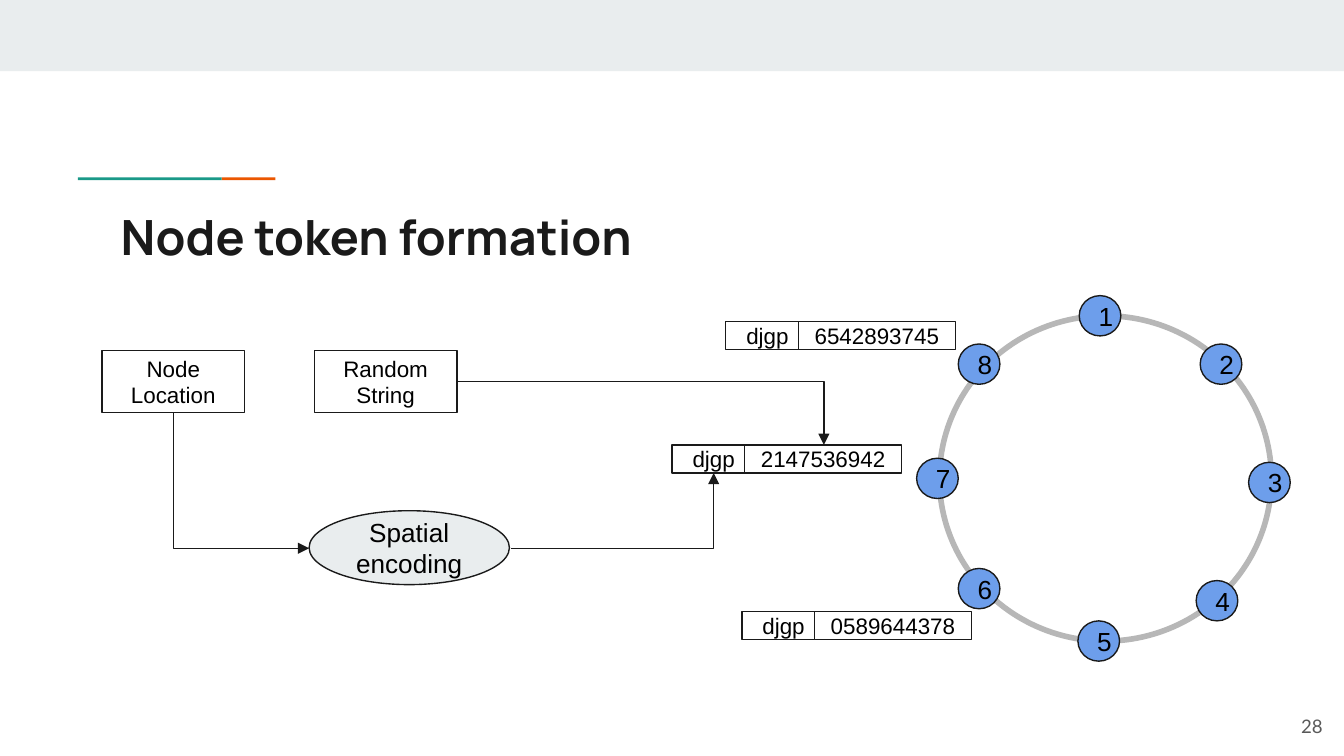
from dataclasses import dataclass
from typing import NamedTuple

from lxml.etree import SubElement
from pptx import Presentation
from pptx.dml.color import RGBColor
from pptx.enum.shapes import MSO_CONNECTOR as Connector, MSO_SHAPE as Preset
from pptx.enum.text import MSO_ANCHOR as Anchor, PP_ALIGN as Align
from pptx.oxml.ns import qn
from pptx.util import Inches, Pt


@dataclass(frozen=True)
class Theme:
    ink: str = "1A1A1A"
    text: str = "000000"
    muted: str = "595959"
    paper: str = "FFFFFF"
    band: str = "E9EDEE"
    teal: str = "1A9988"
    orange: str = "EB5600"
    node: str = "6D9EEB"
    ring: str = "B7B7B7"
    title_font: str = "Manrope"
    body_font: str = "Arial"
    number_font: str = "Lato"
    title_size: int = 26
    large: int = 14
    medium: int = 12
    small: int = 10
    thin: float = 0.75
    thick: float = 3


class Box(NamedTuple):
    left: float
    top: float
    width: float
    height: float


class RingNode(NamedTuple):
    label: str
    left: float
    top: float


class Token(NamedTuple):
    left: float
    top: float
    location_code: str
    random_part: str


class Arrow(NamedTuple):
    """An elbow that leaves its start horizontally and ends vertically."""
    start: tuple[float, float]
    end: tuple[float, float]
    arrowhead: str = "a:tailEnd"


THEME = Theme()
SLIDE_WIDTH = 10
SLIDE_HEIGHT = SLIDE_WIDTH * 9 / 16
NODE_WIDTH, NODE_HEIGHT = 0.31, 0.30
CODE_WIDTH, RANDOM_WIDTH, TOKEN_HEIGHT = 0.62, 1.17, 0.21
RANDOM_OFFSET = 0.54

RING = Box(6.99, 2.35, 2.47, 2.42)
NODES = [
    RingNode("1", 8.03, 2.20),
    RingNode("2", 8.93, 2.56),
    RingNode("3", 9.29, 3.44),
    RingNode("4", 8.90, 4.32),
    RingNode("5", 8.02, 4.62),
    RingNode("6", 7.13, 4.23),
    RingNode("7", 6.82, 3.41),
    RingNode("8", 7.13, 2.56),
]
TOKENS = [
    Token(5.40, 2.39, "djgp", "6542893745"),
    Token(5.52, 4.55, "djgp", "0589644378"),
    Token(5.00, 3.31, "djgp", "2147536942"),
]
ARROWS = [
    Arrow((2.30, 4.08), (1.29, 3.07), "a:headEnd"),
    Arrow((3.80, 4.08), (5.31, 3.52)),
    Arrow((3.41, 2.84), (6.13, 3.31)),
]


def rgb(value: str) -> RGBColor:
    return RGBColor.from_string(value)


def inches(box: Box) -> list[Inches]:
    return [Inches(length) for length in box]


def write(shape, words: str, size: int, font: str = THEME.body_font,
          color: str = THEME.text, align: Align = Align.CENTER,
          anchor: Anchor = Anchor.MIDDLE, bold: bool = False) -> None:
    frame = shape.text_frame
    frame.word_wrap = True
    frame.vertical_anchor = anchor
    frame.margin_left = frame.margin_right = Inches(0.1)
    frame.margin_top = frame.margin_bottom = Inches(0.1)
    paragraph = frame.paragraphs[0]
    paragraph.text = words
    paragraph.alignment = align
    paragraph.font.name = font
    paragraph.font.size = Pt(size)
    paragraph.font.bold = bold
    paragraph.font.color.rgb = rgb(color)


def add_figure(slide, preset: Preset, box: Box, fill: str | None,
               line: str | None = None, weight: float = THEME.thin):
    """Add a preset shape; None leaves the fill or the line out."""
    figure = slide.shapes.add_shape(preset, *inches(box))
    figure.shadow.inherit = False
    if fill:
        figure.fill.solid()
        figure.fill.fore_color.rgb = rgb(fill)
    else:
        figure.fill.background()
    if line:
        figure.line.color.rgb = rgb(line)
        figure.line.width = Pt(weight)
    else:
        figure.line.fill.background()
    return figure


def add_labelled(slide, preset: Preset, box: Box, words: str, size: int,
                 fill: str = THEME.paper) -> None:
    write(add_figure(slide, preset, box, fill, THEME.ink), words, size)


def add_token(slide, token: Token) -> None:
    cells = [(0, CODE_WIDTH, token.location_code),
             (RANDOM_OFFSET, RANDOM_WIDTH, token.random_part)]
    for offset, width, words in cells:
        box = Box(token.left + offset, token.top, width, TOKEN_HEIGHT)
        add_labelled(slide, Preset.RECTANGLE, box, words, THEME.medium)


def add_arrow(slide, arrow: Arrow) -> None:
    points = [Inches(value) for value in arrow.start + arrow.end]
    elbow = slide.shapes.add_connector(Connector.ELBOW, *points)
    elbow.line.color.rgb = rgb(THEME.ink)
    elbow.line.width = Pt(THEME.thin)
    properties = elbow._element.spPr
    properties.find(qn("a:prstGeom")).set("prst", "bentConnector2")
    SubElement(properties.find(qn("a:ln")), qn(arrow.arrowhead), type="triangle")
    SubElement(properties, qn("a:effectLst"))


def add_heading(slide) -> None:
    add_figure(slide, Preset.RECTANGLE, Box(0, 0, SLIDE_WIDTH, 0.53), THEME.band)
    for left, width, color in [(1.65, 0.4, THEME.orange), (0.58, 1.07, THEME.teal)]:
        add_figure(slide, Preset.RECTANGLE, Box(left, 1.32, width, 0.02), color)
    title = slide.shapes.add_textbox(*inches(Box(0.8, 1.44, 8.41, 0.59)))
    write(title, "Node token formation", THEME.title_size, THEME.title_font,
          THEME.ink, Align.LEFT, Anchor.TOP, bold=True)


def main() -> None:
    deck = Presentation()
    deck.slide_width, deck.slide_height = Inches(SLIDE_WIDTH), Inches(SLIDE_HEIGHT)
    slide = deck.slides.add_slide(deck.slide_layouts[6])

    add_heading(slide)
    add_figure(slide, Preset.OVAL, RING, None, THEME.ring, THEME.thick)
    for node in NODES:
        box = Box(node.left, node.top, NODE_WIDTH, NODE_HEIGHT)
        add_labelled(slide, Preset.OVAL, box, node.label, THEME.large, THEME.node)
    for token in TOKENS:
        add_token(slide, token)
    for arrow in ARROWS:
        add_arrow(slide, arrow)
    for left, words in [(0.76, "Node Location"), (2.34, "Random String")]:
        box = Box(left, 2.61, 1.06, 0.46)
        add_labelled(slide, Preset.RECTANGLE, box, words, THEME.medium)
    add_labelled(slide, Preset.OVAL, Box(2.3, 3.8, 1.49, 0.55),
                 "Spatial encoding", THEME.large, THEME.band)

    page_number = slide.shapes.add_textbox(*inches(Box(9.34, 5.19, 0.6, 0.43)))
    write(page_number, "28", THEME.small, THEME.number_font, THEME.muted, Align.RIGHT)
    deck.save("out.pptx")


if __name__ == "__main__":
    main()
